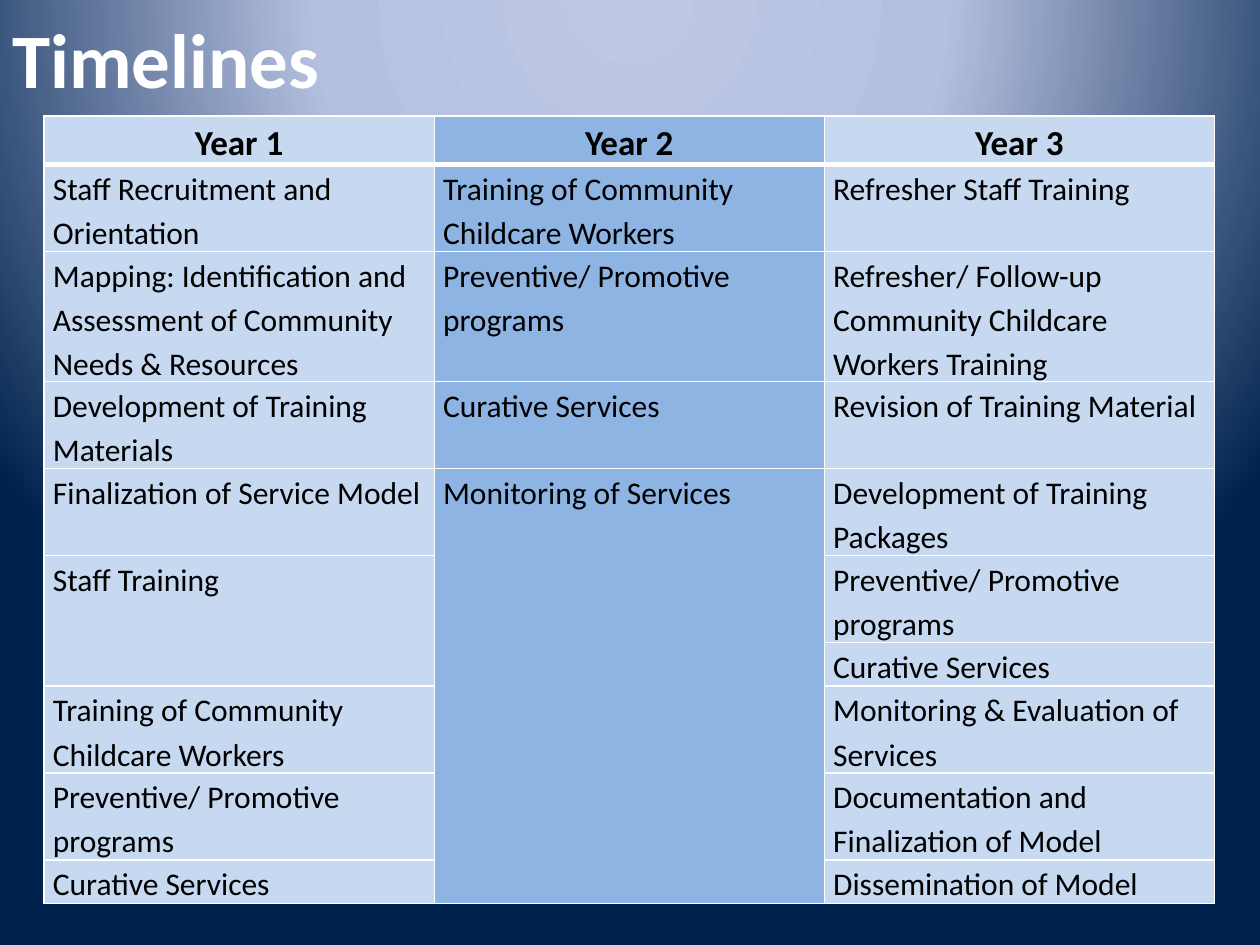
from pptx import Presentation
from pptx.dml.color import RGBColor
from pptx.enum.text import MSO_ANCHOR, PP_ALIGN
from pptx.oxml import parse_xml
from pptx.oxml.ns import nsdecls
from pptx.util import Inches, Pt

FONT = "Calibri"
WHITE, BLACK = "FFFFFF", "000000"
FILLS = ["C6D9F1", "8EB4E3", "C6D9F1"]
GLOW = [(0, "BFC9E5"), (40, "B5C0E0"), (100, "00234D")]

# None marks a cell that is covered by the one above it
ROWS = [
    ("Year 1", "Year 2", "Year 3"),
    ("Staff Recruitment and Orientation",
     "Training of Community Childcare Workers",
     "Refresher Staff Training"),
    ("Mapping: Identification and Assessment of Community Needs & Resources",
     "Preventive/ Promotive programs",
     "Refresher/ Follow-up Community Childcare Workers Training"),
    ("Development of Training Materials", "Curative Services",
     "Revision of Training Material"),
    ("Finalization of Service Model", "Monitoring of Services",
     "Development of Training Packages"),
    ("Staff Training", None, "Preventive/ Promotive programs"),
    (None, None, "Curative Services"),
    ("Training of Community Childcare Workers", None,
     "Monitoring & Evaluation of Services"),
    ("Preventive/ Promotive programs", None,
     "Documentation and Finalization of Model"),
    ("Curative Services", None, "Dissemination of Model"),
]
LINES = [1, 2, 3, 2, 2, 2, 1, 2, 2, 1]
LINE = 0.33
LEFT, TOP, WIDTH = 0.35, 0.92, 9.29


def color(code):
    return RGBColor.from_string(code)


def write(para, text, size, shade, bold):
    run = para.add_run()
    run.text = text
    font = run.font
    font.name, font.size, font.bold = FONT, Pt(size), bold
    font.color.rgb = color(shade)


def paint(slide):
    """Fill the background with a round glow centred above the slide."""
    slide.background.fill.solid()
    stops = "".join(
        f'<a:gs pos="{at * 1000}"><a:srgbClr val="{code}"/></a:gs>'
        for at, code in GLOW)
    grad = parse_xml(
        f'<a:gradFill {nsdecls("a")} rotWithShape="1"><a:gsLst>{stops}</a:gsLst>'
        '<a:path path="circle"><a:fillToRect l="50000" t="-80000" '
        'r="50000" b="180000"/></a:path></a:gradFill>')
    props = slide.background._cSld.bg.bgPr
    props.replace(props[0], grad)


def border(cell, top, bottom):
    props = cell._tc.get_or_add_tcPr()
    sides = [("lnL", 1), ("lnR", 1), ("lnT", top), ("lnB", bottom)]
    for i, (side, width) in enumerate(sides):
        props.insert(i, parse_xml(
            f'<a:{side} {nsdecls("a")} w="{Pt(width)}"><a:solidFill>'
            f'<a:srgbClr val="{WHITE}"/></a:solidFill></a:{side}>'))


def style(cell, row, col):
    cell.margin_left = cell.margin_right = Inches(0.07)
    cell.margin_top = cell.margin_bottom = 0
    cell.fill.solid()
    cell.fill.fore_color.rgb = color(FILLS[col])
    border(cell, 3 if row == 1 else 1, 3 if row == 0 else 1)


def add_title(slide, text):
    box = slide.shapes.add_textbox(0, 0, Inches(9), Inches(TOP))
    frame = box.text_frame
    frame.word_wrap = True
    frame.vertical_anchor = MSO_ANCHOR.MIDDLE
    write(frame.paragraphs[0], text, 44, WHITE, True)


def add_plan(slide):
    table = slide.shapes.add_table(
        len(ROWS), len(FILLS), Inches(LEFT), Inches(TOP),
        Inches(WIDTH), Inches(LINE * sum(LINES))).table
    for row, count in zip(table.rows, LINES):
        row.height = Inches(LINE * count)
    for r, texts in enumerate(ROWS):
        for c, text in enumerate(texts):
            cell = table.cell(r, c)
            style(cell, r, c)
            if text is None:
                continue
            para = cell.text_frame.paragraphs[0]
            para.line_spacing = 1.15
            head = r == 0
            if head:
                para.alignment = PP_ALIGN.CENTER
            write(para, text, 20 if head else 18, BLACK, head)
            end = r
            while end + 1 < len(ROWS) and ROWS[end + 1][c] is None:
                end += 1
            if end > r:
                cell.merge(table.cell(end, c))


def main():
    deck = Presentation()
    deck.slide_width, deck.slide_height = Inches(10), Inches(7.5)
    slide = deck.slides.add_slide(deck.slide_layouts[6])
    paint(slide)
    add_title(slide, "Timelines")
    add_plan(slide)
    deck.save("out.pptx")


if __name__ == "__main__":
    main()
